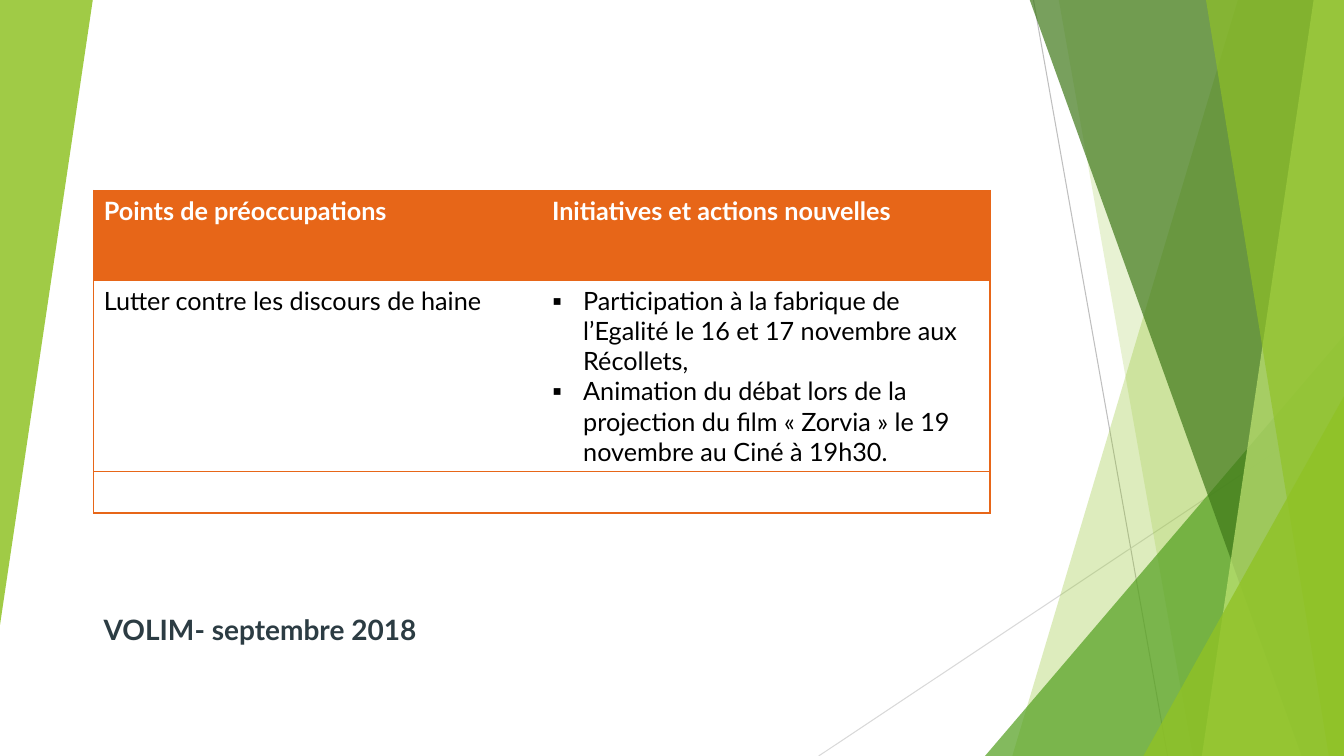
from dataclasses import dataclass
from lxml.etree import SubElement
from pptx import Presentation
from pptx.dml.color import RGBColor
from pptx.enum.shapes import MSO_CONNECTOR, MSO_SHAPE
from pptx.enum.text import MSO_ANCHOR
from pptx.oxml.ns import qn
from pptx.util import Emu, Pt

COLS, ROWS = 1333, 750
CELL = 9144
FONT = "Lato"
HEX = {
    "lime": "90C226", "leaf": "54A021", "forest": "3F7819", "pale": "C0E474",
    "silver": "BFBFBF", "mist": "D9D9D9", "slate": "2C3C43",
    "orange": "E76618", "white": "FFFFFF", "black": "000000",
}
PLAIN = "{2D5ABB26-0587-4C30-8999-92F81FD0307C}"


@dataclass
class Ray:
    start: tuple[int, int]
    end: tuple[int, int]
    color: str


@dataclass
class Band:
    top: int
    foot: int
    color: str
    alpha: int


@dataclass
class Wedge:
    left: int
    top: int
    width: int
    height: int
    color: str
    alpha: int
    turn: int = 0


RAYS = [
    Ray((1025, 0), (1158, ROWS), "silver"),
    Ray((COLS, 403), (812, ROWS), "mist"),
]
DECOR = [
    Band(1228, 1004, "lime", 30),
    Band(1050, 1183, "lime", 20),
    Wedge(977, 333, 356, 417, "leaf", 72),
    Band(1021, 1291, "forest", 70),
    Band(1303, 1192, "pale", 70),
    Band(1196, 1318, "lime", 65),
    Wedge(1134, 393, 199, 357, "lime", 80),
    Wedge(0, 0, 92, 620, "lime", 85, 180),
]
HEIGHTS = [89, 190, 41]
BODY = [
    [["Points de préoccupations"], ["Initiatives et actions nouvelles"]],
    [["Lutter contre les discours de haine"], [
        "Participation à la fabrique de l’Egalité le 16 et 17 novembre aux Récollets,",
        "Animation du débat lors de la projection du film « Zorvia » le 19 novembre au Ciné à 19h30.",
    ]],
    [[""], [""]],
]


def grid(count: int) -> Emu:
    return Emu(count * CELL)


def tint(name: str) -> RGBColor:
    return RGBColor.from_string(HEX[name])


def style(para, size: int, color: str, bold: bool) -> None:
    para.font.name = FONT
    para.font.size = Pt(size)
    para.font.bold = bold
    para.font.color.rgb = tint(color)


def draw_ray(shapes, ray: Ray) -> None:
    line = shapes.add_connector(
        MSO_CONNECTOR.STRAIGHT, *map(grid, ray.start + ray.end))
    line.line.color.rgb = tint(ray.color)
    line.line.width = Pt(0.75)
    SubElement(line._element.spPr, qn("a:effectLst"))


def draw_decor(shapes, item: Band | Wedge) -> None:
    if isinstance(item, Band):
        pen = shapes.build_freeform(item.top, -1, scale=CELL)
        pen.add_line_segments([(COLS, -1), (COLS, ROWS), (item.foot, ROWS)])
        shape = pen.convert_to_shape()
    else:
        box = (item.left, item.top, item.width, item.height)
        shape = shapes.add_shape(
            MSO_SHAPE.ISOSCELES_TRIANGLE, *map(grid, box))
        shape.adjustments[0] = 1
        shape.rotation = item.turn
    shape.shadow.inherit = False
    shape.line.fill.background()
    shape.fill.solid()
    shape.fill.fore_color.rgb = tint(item.color)
    color = shape._element.spPr.find(".//" + qn("a:srgbClr"))
    SubElement(color, qn("a:alpha"), val=str(item.alpha * 1000))


def add_edge(cell, side: str) -> None:
    props = cell._tc.get_or_add_tcPr()
    edge = SubElement(props, qn("a:ln" + side), w=str(Pt(1)))
    fill = SubElement(edge, qn("a:solidFill"))
    SubElement(fill, qn("a:srgbClr"), val=HEX["orange"])


def add_mark(para) -> None:
    props = para._p.get_or_add_pPr()
    props.set("marL", str(grid(31)))
    props.set("indent", str(grid(-31)))
    face = SubElement(props, qn("a:buFont"), typeface=FONT)
    mark = SubElement(props, qn("a:buChar"), char="▪")
    props.insert(0, face)
    props.insert(1, mark)


def fill_cell(cell, row: int, col: int, lines: list[str]) -> None:
    for side in ("LTB", "RTB")[col]:
        add_edge(cell, side)
    if row == 0:
        cell.fill.solid()
        cell.fill.fore_color.rgb = tint("orange")
    else:
        cell.fill.background()
    cell.text_frame.text = "\n".join(lines)
    for para in cell.text_frame.paragraphs:
        style(para, 18, "black" if row else "white", row == 0)
        if len(lines) > 1:
            add_mark(para)


def draw_table(shapes) -> None:
    box = (93, 189, 889, sum(HEIGHTS))
    table = shapes.add_table(len(BODY), 2, *map(grid, box)).table
    table._tbl.tblPr.find(qn("a:tableStyleId")).text = PLAIN
    table.horz_banding = False
    for row, cells in enumerate(BODY):
        table.rows[row].height = grid(HEIGHTS[row])
        for col, lines in enumerate(cells):
            fill_cell(table.cell(row, col), row, col, lines)


def draw_title(shapes) -> None:
    frame = shapes.add_textbox(*map(grid, (93, 35, 954, 611))).text_frame
    frame.word_wrap = True
    frame.vertical_anchor = MSO_ANCHOR.BOTTOM
    frame.text = "VOLIM- septembre 2018"
    style(frame.paragraphs[0], 20, "slate", True)


def main() -> None:
    deck = Presentation()
    deck.slide_width, deck.slide_height = grid(COLS), grid(ROWS)
    shapes = deck.slides.add_slide(deck.slide_layouts[6]).shapes
    for ray in RAYS:
        draw_ray(shapes, ray)
    for item in DECOR:
        draw_decor(shapes, item)
    draw_title(shapes)
    draw_table(shapes)
    deck.save("out.pptx")


if __name__ == "__main__":
    main()
